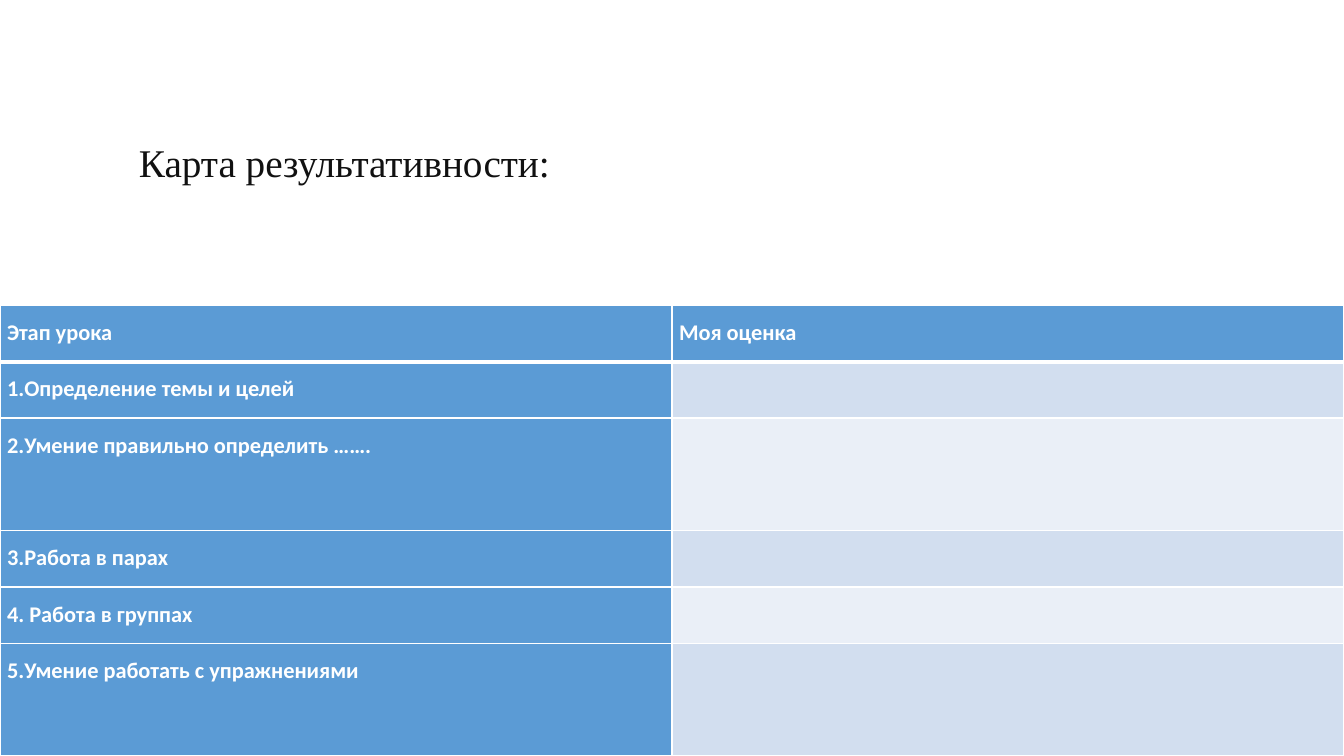
from pptx import Presentation
from pptx.dml.color import RGBColor
from pptx.enum.text import MSO_ANCHOR as Anchor, PP_ALIGN as Align
from pptx.oxml import parse_xml
from pptx.oxml.ns import nsdecls
from pptx.util import Pt

BLUE = RGBColor(0x5B, 0x9B, 0xD5)
PALE = RGBColor(0xEA, 0xEF, 0xF7)
MIST = RGBColor(0xD2, 0xDE, 0xEF)
WHITE = RGBColor(0xFF, 0xFF, 0xFF)
INK = RGBColor(0x11, 0x11, 0x11)

STAGES = [
    ("Этап урока", 1),
    ("1.Определение темы и целей", 1),
    ("2.Умение правильно определить …….", 2),
    ("3.Работа в парах", 1),
    ("4. Работа в группах", 1),
    ("5.Умение работать с упражнениями", 2),
]
SCORE = "Моя оценка"


def px(num):
    return int(num * 9144)


class Deck:
    """Draws the lesson score card on one blank slide."""

    def __init__(self, wide, high):
        self.prs = Presentation()
        self.prs.slide_width, self.prs.slide_height = px(wide), px(high)
        self.slide = self.prs.slides.add_slide(self.prs.slide_layouts[6])

    def style(self, par, font, size, color, bold=False):
        for run in par.runs:
            run.font.name = font
            run.font.size = Pt(size)
            run.font.bold = bold
            run.font.color.rgb = color

    def title(self, text, left, top, wide, high, below):
        box = self.slide.shapes.add_textbox(px(left), px(top), px(wide), px(high))
        frame = box.text_frame
        frame.word_wrap = False
        frame.vertical_anchor = Anchor.BOTTOM
        frame.margin_bottom = px(below)
        frame.text = text
        self.style(frame.paragraphs[0], "Times New Roman", 28, INK)

    def border(self, cell, row):
        props = cell._tc.get_or_add_tcPr()
        widths = {"L": 1, "R": 1, "T": 3 if row == 1 else 1, "B": 3 if row == 0 else 1}
        for side, width in widths.items():
            props.append(parse_xml(
                f'<a:ln{side} {nsdecls("a")} w="{Pt(width)}"><a:solidFill>'
                f'<a:srgbClr val="{WHITE}"/></a:solidFill></a:ln{side}>'))

    def cell(self, cell, row, text, fill):
        self.border(cell, row)
        cell.fill.solid()
        cell.fill.fore_color.rgb = fill
        if text:
            cell.margin_left = cell.margin_right = px(7)
            cell.margin_top = cell.margin_bottom = 0
            par = cell.text_frame.paragraphs[0]
            par.text = text
            par.alignment = Align.JUSTIFY
            par.line_spacing = 1.5
            self.style(par, "Calibri", 16, WHITE, True)

    def table(self, left, top, wide, high):
        frame = self.slide.shapes.add_table(
            len(STAGES), 2, px(left), px(top), px(wide), px(high))
        table = frame.table
        table.horz_banding = False
        total = sum(share for _, share in STAGES)
        for row, (stage, share) in enumerate(STAGES):
            table.rows[row].height = px(high * share / total)
            band = MIST if row % 2 else PALE
            self.cell(table.cell(row, 0), row, stage, BLUE)
            self.cell(table.cell(row, 1), row, "" if row else SCORE, band if row else BLUE)

    def save(self):
        self.prs.save("out.pptx")


def main():
    deck = Deck(1333, 750)
    deck.table(0, 303, 1333, 447)
    deck.title("Карта результативности:", 128, 50, 432, 168, 34)
    deck.save()


if __name__ == "__main__":
    main()
